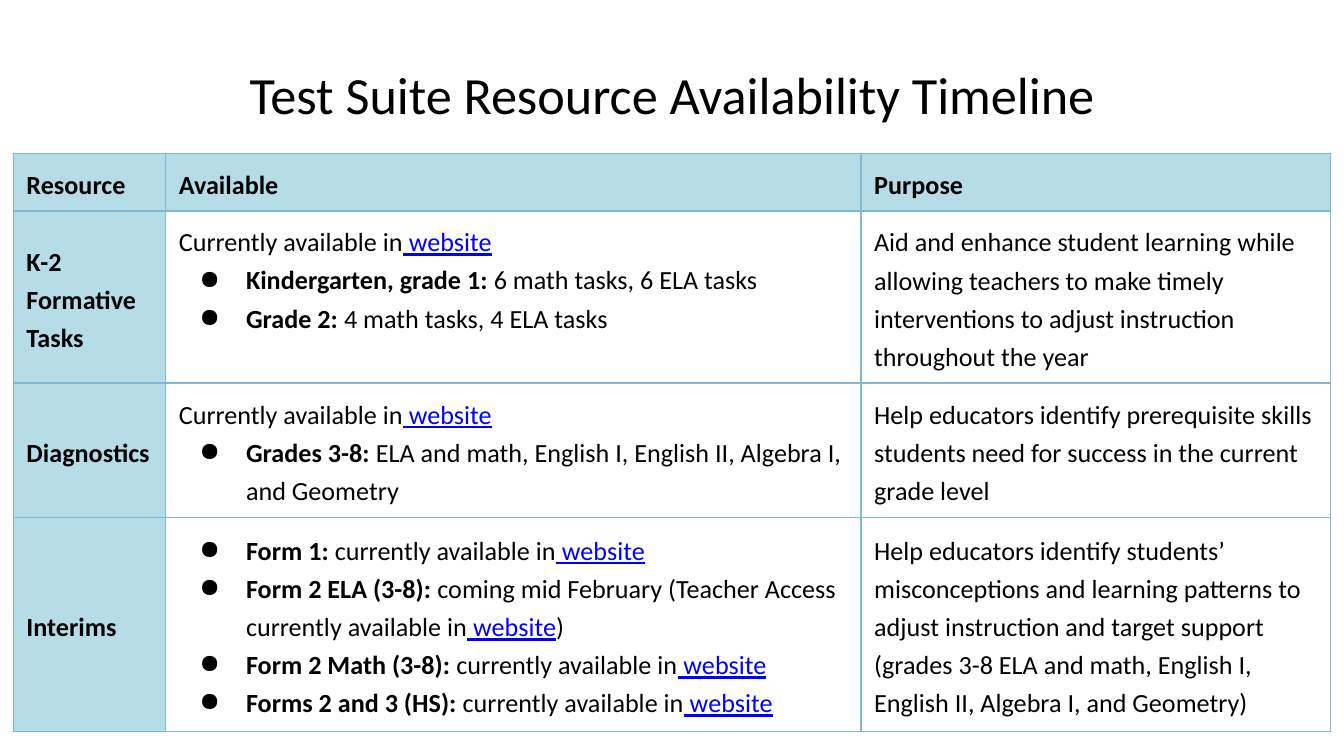
"""Build the resource availability timeline slide."""
import pptx
import pptx.dml.color
import pptx.enum.text
import pptx.oxml.ns
import pptx.util
from lxml import etree
from pptx.util import Cm

MIDDLE = pptx.enum.text.MSO_ANCHOR.MIDDLE
TOP = pptx.enum.text.MSO_ANCHOR.TOP
HEADING_FILL, BODY_FILL, BORDER = "B6DDE7", "FFFFFF", "7FB9D5"
TEXT_COLOR, LINK_COLOR = "000000", "0000FF"


def color(value):
    return pptx.dml.color.RGBColor.from_string(value)


def add_element(parent, tag, **attributes):
    return etree.SubElement(parent, pptx.oxml.ns.qn(tag), attributes)


portal = (" website", "link")
available = [("Currently available in", "plain"), portal]
rows = [
    ("Resource", [[("Available", "bold")]], "Purpose"),
    ("K-2 Formative Tasks",
     [available,
      [("Kindergarten, grade 1: ", "bold"), ("6 math tasks, 6 ELA tasks", "plain")],
      [("Grade 2: ", "bold"), ("4 math tasks, 4 ELA tasks", "plain")]],
     "Aid and enhance student learning while allowing teachers to make timely "
     "interventions to adjust instruction throughout the year"),
    ("Diagnostics",
     [available,
      [("Grades 3-8: ", "bold"),
       ("ELA and math, English I, English II, Algebra I, and Geometry", "plain")]],
     "Help educators identify prerequisite skills students need for success "
     "in the current grade level"),
    ("Interims",
     [[("Form 1:", "bold"), (" currently available in", "plain"), portal],
      [("Form 2 ELA (3-8): ", "bold"),
       ("coming mid February (Teacher Access currently available in", "plain"),
       portal, (")", "plain")],
      [("Form 2 Math (3-8): ", "bold"), ("currently available in", "plain"), portal],
      [("Forms 2 and 3 (HS): ", "bold"), ("currently available in", "plain"), portal]],
     "Help educators identify students’ misconceptions and learning patterns to "
     "adjust instruction and target support (grades 3-8 ELA and math, English I, "
     "English II, Algebra I, and Geometry)"),
]
column_widths = [2.88, 13.14, 8.87]
row_heights = [1.09, 3.25, 2.54, 4.04]

deck = pptx.Presentation()
deck.slide_width, deck.slide_height = Cm(25.4), Cm(14.29)
page = deck.slides.add_slide(deck.slide_layouts[6])

title = page.shapes.add_textbox(Cm(1.27), Cm(0.58), Cm(22.86), Cm(2.39))
frame = title.text_frame
frame.word_wrap = True
frame.vertical_anchor = MIDDLE
frame.margin_left = frame.margin_right = Cm(0.25)
frame.margin_top = frame.margin_bottom = Cm(0.25)
para = frame.paragraphs[0]
para.text = "Test Suite Resource Availability Timeline"
para.alignment = pptx.enum.text.PP_ALIGN.CENTER
para.font.name, para.font.size = "Calibri", pptx.util.Pt(28)
para.font.color.rgb = color(TEXT_COLOR)

table = page.shapes.add_table(
    len(rows), len(column_widths), Cm(0.25), Cm(2.9),
    Cm(sum(column_widths)), Cm(sum(row_heights))).table
table.first_row = table.horz_banding = False
for column, width in zip(table.columns, column_widths):
    column.width = Cm(width)
for row, height in zip(table.rows, row_heights):
    row.height = Cm(height)

for row_index, (resource, availability, purpose) in enumerate(rows):
    purpose_style = "bold" if row_index == 0 else "plain"
    contents = [[[(resource, "bold")]], availability, [[(purpose, purpose_style)]]]
    for column_index, paragraphs in enumerate(contents):
        cell = table.cell(row_index, column_index)
        is_heading = row_index == 0 or column_index == 0
        cell.vertical_anchor = TOP if (row_index, column_index) == (1, 1) else MIDDLE
        cell.margin_left = cell.margin_right = Cm(0.25)
        cell.margin_top = cell.margin_bottom = Cm(0.18)
        for side in "LRTB":
            line = add_element(cell._tc.get_or_add_tcPr(), f"a:ln{side}", w="9525")
            add_element(add_element(line, "a:solidFill"), "a:srgbClr", val=BORDER)
        cell.fill.solid()
        cell.fill.fore_color.rgb = color(HEADING_FILL if is_heading else BODY_FILL)

        for para_index, spans in enumerate(paragraphs):
            frame = cell.text_frame
            para = frame.paragraphs[0] if para_index == 0 else frame.add_paragraph()
            para.line_spacing = 1.2
            if not is_heading and column_index == 1 and spans is not available:
                properties = para._p.get_or_add_pPr()
                properties.set("marL", str(Cm(1.27)))
                properties.set("indent", str(Cm(-0.88)))
                add_element(properties, "a:buChar", char="●")
            para.font.name, para.font.size = "Calibri", pptx.util.Pt(14)
            for text, style in spans:
                span = para.add_run()
                span.text = text
                span.font.bold = style == "bold"
                span.font.underline = style == "link"
                span.font.color.rgb = color(LINK_COLOR if style == "link" else TEXT_COLOR)

deck.save("out.pptx")
